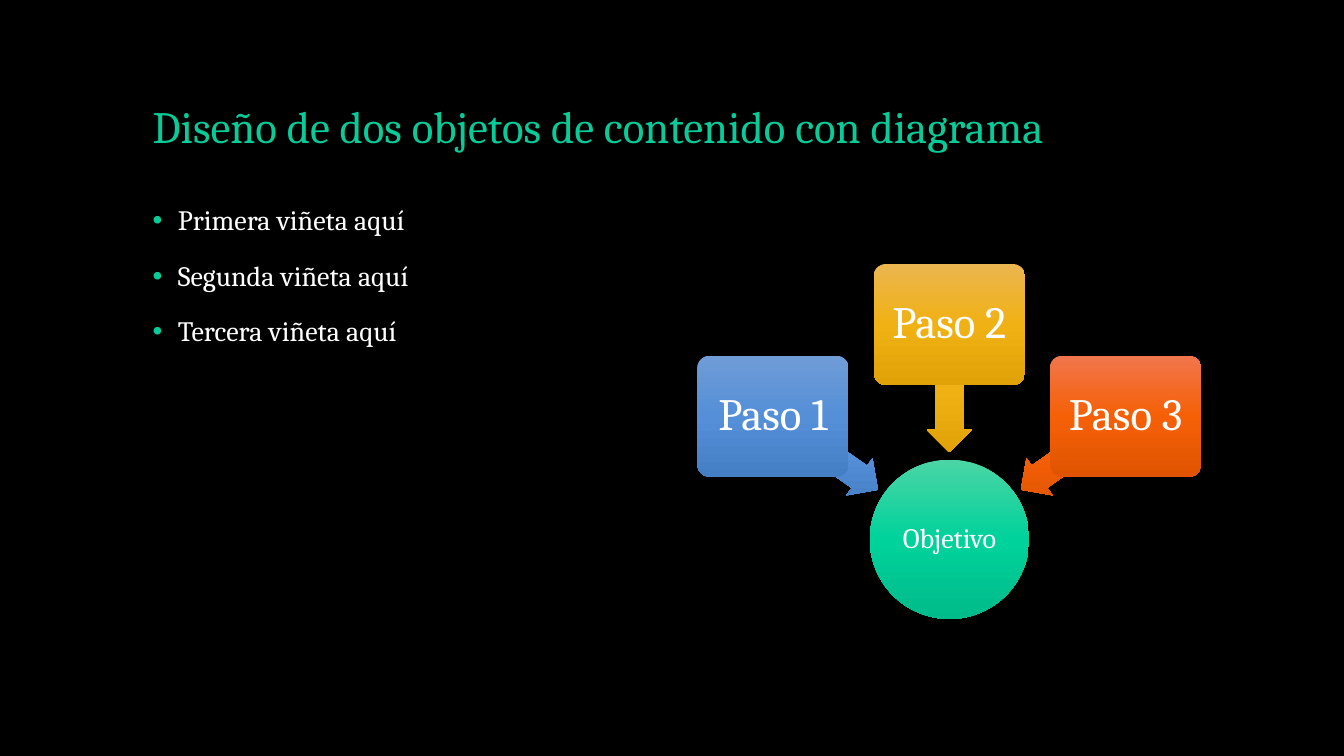
import pptx
import pptx.util
import pptx.dml.color
import pptx.enum.shapes
import pptx.enum.text
import pptx.oxml
import pptx.oxml.ns
from lxml import etree

Pt = pptx.util.Pt
RGBColor = pptx.dml.color.RGBColor
MSO_SHAPE = pptx.enum.shapes.MSO_SHAPE
MSO_ANCHOR = pptx.enum.text.MSO_ANCHOR
PP_ALIGN = pptx.enum.text.PP_ALIGN
qn = pptx.oxml.ns.qn

THEME = {
    "font": "Cambria",
    "background": "000000",
    "accent": "07CB98",
    "text": "FFFFFF",
    "title_size": 32,
    "body_size": 20,
    "step_size": 32,
    "green": ("4BD5A5", "00D29B", "00BB8A"),
    "blue": ("709CD7", "548FD7", "447FC6"),
    "yellow": ("EBB64F", "F0B114", "E0A207"),
    "orange": ("F1764C", "F56007", "E05400"),
}


def style_paragraph(paragraph, size, color):
    paragraph.line_spacing = 0.9
    paragraph.font.name = THEME["font"]
    paragraph.font.size = Pt(size)
    paragraph.font.color.rgb = RGBColor.from_string(color)


def add_gradient_shape(kind, center_x, center_y, width, height, colors, text="", size=0, inset=0):
    shape = slide.shapes.add_shape(
        kind, Pt(center_x - width / 2), Pt(center_y - height / 2), Pt(width), Pt(height))
    shape.shadow.inherit = False
    shape.line.fill.background()
    shape.fill.gradient()
    gradient = shape.element.spPr.find(qn("a:gradFill"))
    gradient.set("rotWithShape", "0")
    gradient.find(qn("a:lin")).set("ang", "5400000")
    stops = gradient.find(qn("a:gsLst"))
    for stop in list(stops):
        stops.remove(stop)
    for position, color in zip((0, 50000, 100000), colors):
        stop = etree.SubElement(stops, qn("a:gs"), pos=str(position))
        etree.SubElement(stop, qn("a:srgbClr"), val=color)
    if text:
        frame = shape.text_frame
        frame.text = text
        frame.word_wrap = True
        frame.vertical_anchor = MSO_ANCHOR.MIDDLE
        frame.margin_left = frame.margin_right = Pt(inset)
        frame.margin_top = frame.margin_bottom = Pt(inset)
        frame.paragraphs[0].alignment = PP_ALIGN.CENTER
        style_paragraph(frame.paragraphs[0], size, THEME["text"])
    return shape


presentation = pptx.Presentation()
presentation.slide_width = Pt(960)
presentation.slide_height = Pt(540)
slide = presentation.slides.add_slide(presentation.slide_layouts[6])
slide.background.fill.solid()
slide.background.fill.fore_color.rgb = RGBColor.from_string(THEME["background"])

title = slide.shapes.add_textbox(Pt(102), Pt(29), Pt(756), Pt(84))
title.text_frame.word_wrap = True
title.text_frame.vertical_anchor = MSO_ANCHOR.BOTTOM
title.text_frame.text = "Diseño de dos objetos de contenido con diagrama"
style_paragraph(title.text_frame.paragraphs[0], THEME["title_size"], THEME["accent"])

body = slide.shapes.add_textbox(Pt(102), Pt(144), Pt(360), Pt(343))
body.text_frame.word_wrap = True
body.text_frame.text = "Primera viñeta aquí\nSegunda viñeta aquí\nTercera viñeta aquí"
for index, paragraph in enumerate(body.text_frame.paragraphs):
    properties = paragraph._p.get_or_add_pPr()
    properties.set("marL", str(Pt(18)))
    properties.set("indent", str(-Pt(18)))
    bullet_color = etree.SubElement(properties, qn("a:buClr"))
    etree.SubElement(bullet_color, qn("a:srgbClr"), val=THEME["accent"])
    etree.SubElement(properties, qn("a:buFont"), typeface="Arial")
    etree.SubElement(properties, qn("a:buChar"), char="•")
    paragraph.space_before = Pt(18 if index else 0)
    style_paragraph(paragraph, THEME["body_size"], THEME["text"])

diagram_x = 678.2
add_gradient_shape(MSO_SHAPE.OVAL, diagram_x, 385.2, 113.8, 113.8, THEME["green"],
                   "Objetivo", THEME["body_size"])

steps = [
    ("Paso 1", "blue", -1, 297.3, 323.6),
    ("Paso 2", "yellow", 0, 231.8, 277.5),
    ("Paso 3", "orange", 1, 297.3, 323.6),
]
for label, color, side, box_y, arrow_y in steps:
    arrow = add_gradient_shape(MSO_SHAPE.LEFT_ARROW, diagram_x + 88.5 * side, arrow_y,
                               91.4, 32.4, THEME[color])
    arrow.adjustments[0] = 0.6
    arrow.adjustments[1] = 0.5
    arrow.rotation = 270 + 55 * side
    box = add_gradient_shape(MSO_SHAPE.ROUNDED_RECTANGLE, diagram_x + 126 * side, box_y,
                             108, 86.4, THEME[color], label, THEME["step_size"], 4.8)
    box.adjustments[0] = 0.1

presentation.save("out.pptx")
